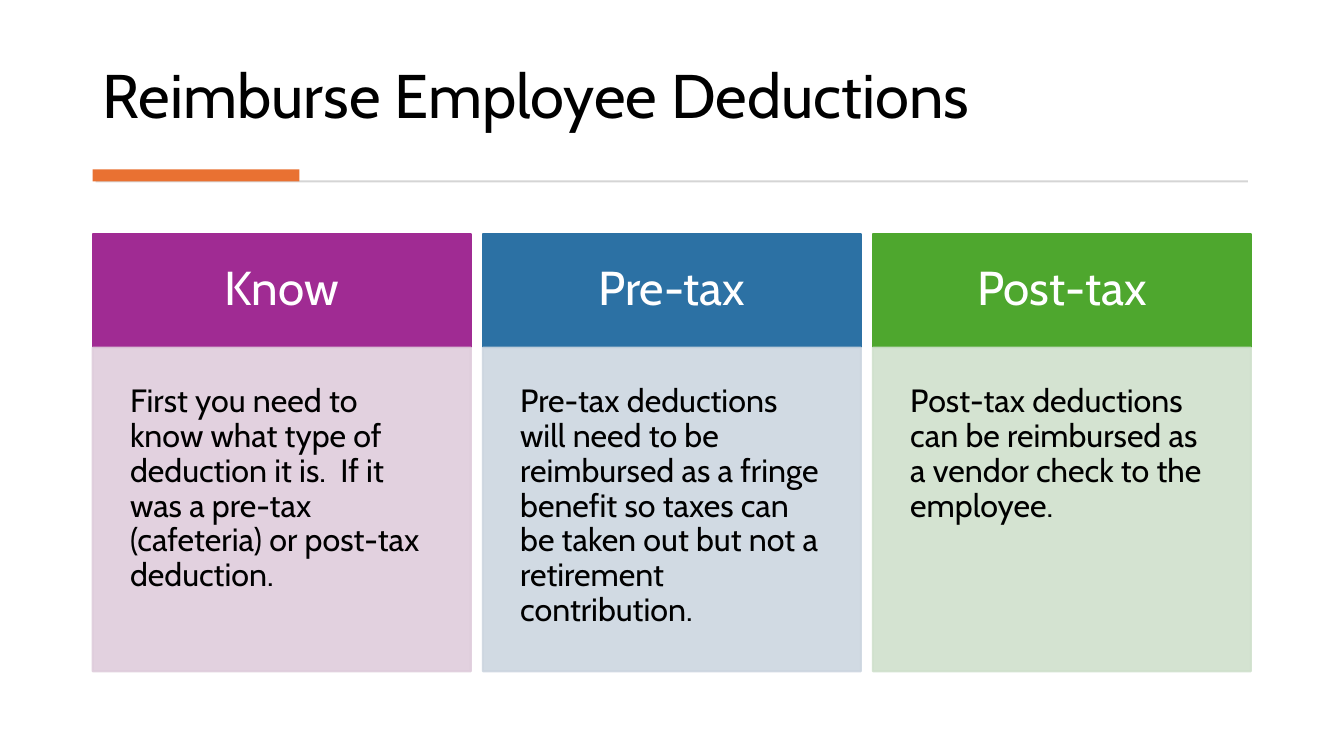
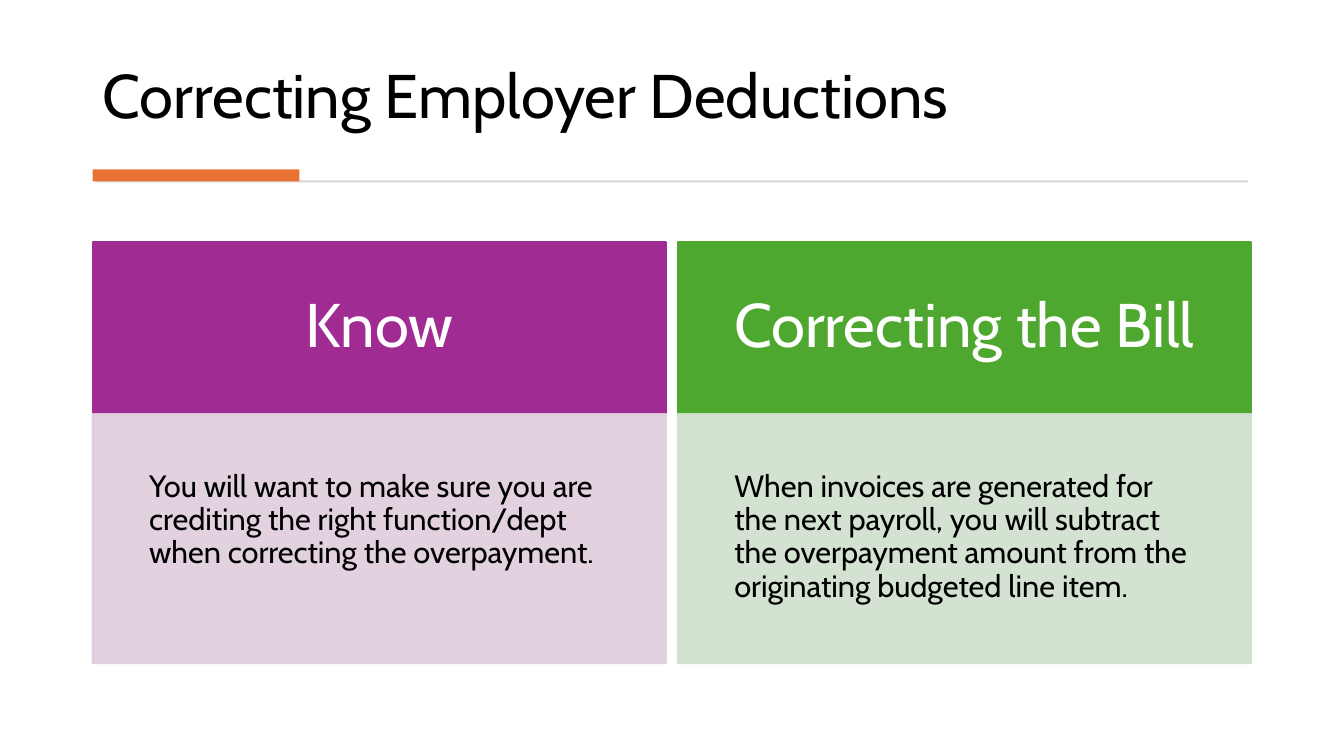
from lxml.etree import SubElement as Sub
from pptx import Presentation as Deck
from pptx.dml.color import RGBColor as RGB
from pptx.enum.shapes import MSO_SHAPE as Form
from pptx.enum.text import MSO_ANCHOR as Anchor, MSO_AUTO_SIZE as Fit, PP_ALIGN as Align
from pptx.oxml.ns import qn
from pptx.util import Inches, Pt

BLACK = RGB(0x00, 0x00, 0x00)
WHITE = RGB(0xFF, 0xFF, 0xFF)
GRAY = RGB(0xD5, 0xD5, 0xD5)
ORANGE = RGB(0xE9, 0x71, 0x32)
PURPLE = RGB(0xA0, 0x2B, 0x93)
BLUE = RGB(0x2C, 0x71, 0xA4)
GREEN = RGB(0x4E, 0xA7, 0x2E)
PALE = {
    PURPLE: RGB(0xDF, 0xCD, 0xDC),
    BLUE: RGB(0xCD, 0xD6, 0xE0),
    GREEN: RGB(0xD0, 0xE1, 0xCD),
}


def assign(item, values):
    for name, value in values.items():
        setattr(item, name, value)


class Page:
    FONT = "Cabin"
    CELL = Inches(0.1)
    LEFT, WIDTH, GAP = 9.2, 114.9, 1.2

    def __init__(self):
        self.deck = Deck()
        assign(self.deck, {"slide_width": Inches(13.333), "slide_height": Inches(7.5)})
        self.slide = None

    def span(self, *cells):
        return [round(cell * self.CELL) for cell in cells]

    def text(self, shape, words, size, color, align, anchor, inset):
        frame = shape.text_frame
        frame.text = words
        sides = ("margin_left", "margin_top", "margin_right", "margin_bottom")
        assign(frame, dict.fromkeys(sides, self.span(inset)[0]))
        assign(frame, {"word_wrap": True, "auto_size": Fit.NONE, "vertical_anchor": anchor})
        par = frame.paragraphs[0]
        assign(par, {"alignment": align, "line_spacing": 0.9})
        assign(par.runs[0].font, {"name": self.FONT, "size": Pt(size)})
        par.runs[0].font.color.rgb = color

    def box(self, col, row, wide, high, color, edge=0, alpha=None):
        shape = self.slide.shapes.add_shape(Form.RECTANGLE, *self.span(col, row, wide, high))
        shape.shadow.inherit = False
        shape.fill.solid()
        shape.fill.fore_color.rgb = color
        if edge:
            shape.line.color.rgb = color
            shape.line.width = Pt(edge)
        else:
            shape.line.fill.background()
        if alpha:
            for tint in shape.element.spPr.iter(qn("a:srgbClr")):
                Sub(tint, qn("a:alpha")).set("val", str(alpha * 1000))
        return shape

    def start(self, title):
        self.slide = self.deck.slides.add_slide(self.deck.slide_layouts[5])
        head = self.slide.shapes.title
        place = self.span(self.LEFT, 2.8, self.WIDTH, 11.1)
        assign(head, dict(zip(("left", "top", "width", "height"), place)))
        self.text(head, title, 44, BLACK, Align.LEFT, Anchor.BOTTOM, 0.8)
        assign(head.text_frame, dict.fromkeys(("margin_left", "margin_right"), Inches(0.1)))
        self.box(9.5, 17.9, 114.3, 0.2, GRAY)
        self.box(self.LEFT, 16.8, 20.5, 1.2, ORANGE)

    def cards(self, items, top, head, body):
        count = len(items)
        wide = (self.WIDTH - self.GAP * (count - 1)) / count
        for i, (name, words, color) in enumerate(items):
            col = self.LEFT + i * (wide + self.GAP)
            cap = self.box(col, top, wide, head["high"], color, 1.5)
            self.text(cap, name, head["size"], WHITE, Align.CENTER, Anchor.MIDDLE, head["inset"])
            low = top + head["high"] + 0.1
            pane = self.box(col, low, wide, body["high"], PALE[color], 1.5, 90)
            self.text(pane, words, body["size"], BLACK, Align.LEFT, Anchor.TOP, body["inset"])


def main():
    page = Page()
    page.start("Reimburse Employee Deductions")
    page.cards(
        [
            ("Know", "First you need to know what type of deduction it is.  If it was a "
             "pre-tax (cafeteria) or post-tax deduction.", PURPLE),
            ("Pre-tax", "Pre-tax deductions will need to be reimbursed as a fringe benefit "
             "so taxes can be taken out but not a retirement contribution.", BLUE),
            ("Post-tax", "Post-tax deductions can be reimbursed as a vendor check to the "
             "employee.", GREEN),
        ],
        23.2,
        {"high": 11.2, "size": 34, "inset": 3},
        {"high": 32.1, "size": 23, "inset": 3.7},
    )
    page.start("Correcting Employer Deductions")
    page.cards(
        [
            ("Know", "You will want to make sure you are crediting the right function/dept "
             "when correcting the overpayment.", PURPLE),
            ("Correcting the Bill", "When invoices are generated for the next payroll, you "
             "will subtract the overpayment amount from the originating budgeted line item.",
             GREEN),
        ],
        24,
        {"high": 17, "size": 44, "inset": 4.5},
        {"high": 24.7, "size": 22, "inset": 5.6},
    )
    page.deck.save("out.pptx")


if __name__ == "__main__":
    main()
